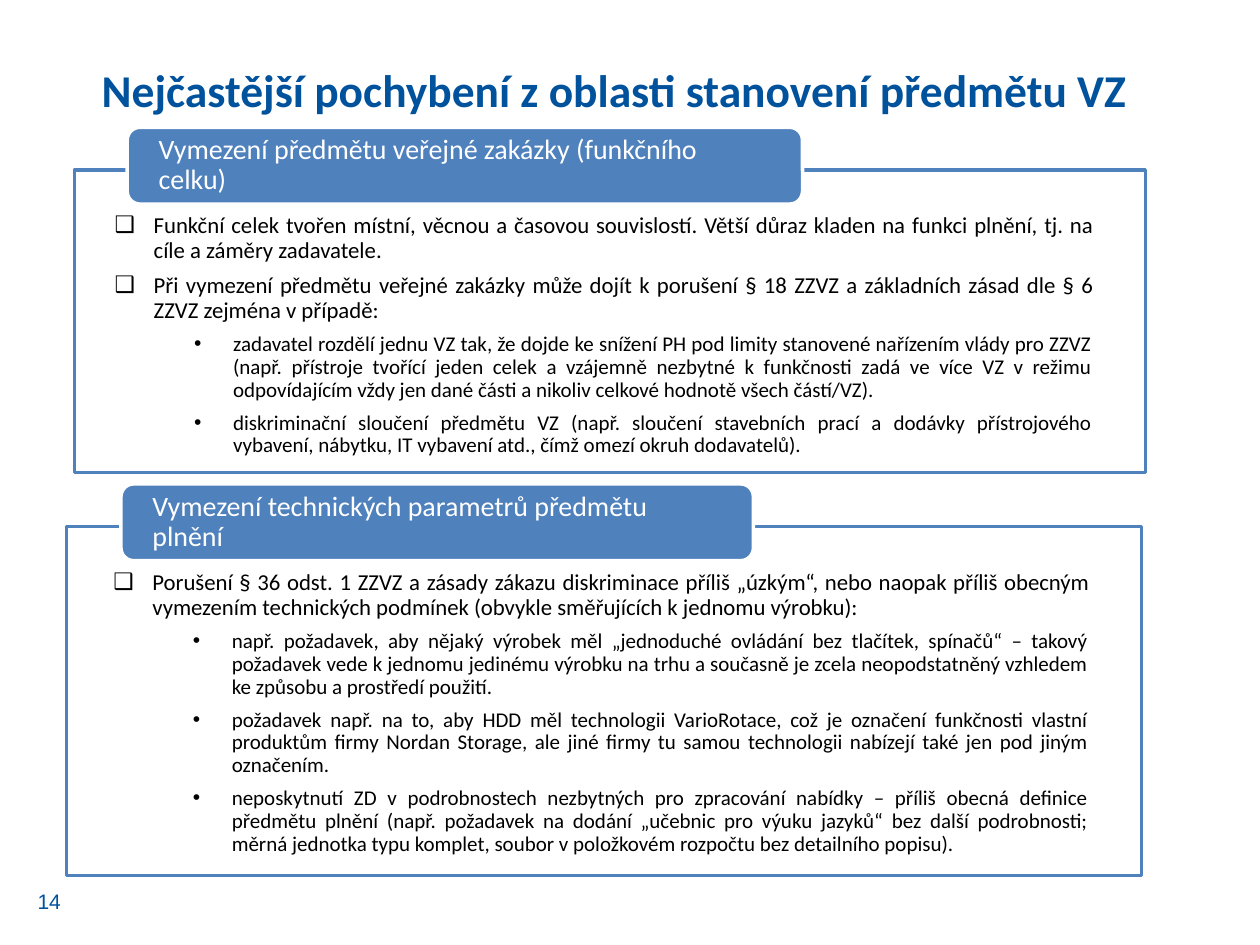
from dataclasses import dataclass

from lxml.etree import SubElement
from pptx import Presentation
from pptx.dml.color import RGBColor
from pptx.enum.shapes import MSO_SHAPE
from pptx.enum.text import MSO_ANCHOR, PP_ALIGN
from pptx.oxml.ns import qn
from pptx.util import Inches, Pt

SLIDE_W, SLIDE_H = Inches(10), Inches(7.5)


@dataclass(frozen=True)
class Theme:
    navy: str = "00529C"
    blue: str = "4F81BD"
    white: str = "FFFFFF"
    black: str = "000000"
    font: str = "Calibri"
    number_font: str = "Arial"
    title: int = 26
    header: int = 16
    point: int = 13
    detail: int = 12
    number: int = 12
    border: int = 2


THEME = Theme()

# Outline depth: bullet, level, indent in inches, type size
POINT = ("❑", 1, 0.31, THEME.point)
DETAIL = ("•", 3, 0.94, THEME.detail)
HANGING = 0.31

# Areas are left, top, width, height in percent of the slide
SECTIONS = [
    {
        "header": "Vymezení předmětu veřejné zakázky (funkčního celku)",
        "header_area": (10.1, 13.47, 53.6, 8.13),
        "frame_area": (5.9, 18, 85, 32),
        "body_area": (3.5, 16.93, 88.8, 32),
        "body": [
            (POINT, "Funkční celek tvořen místní, věcnou a časovou souvislostí. Větší důraz "
                    "kladen na funkci plnění, tj. na cíle a záměry zadavatele."),
            (POINT, "Při vymezení předmětu veřejné zakázky může dojít k porušení § 18 ZZVZ "
                    "a základních zásad dle § 6 ZZVZ zejména v případě:"),
            (DETAIL, "zadavatel rozdělí jednu VZ tak, že dojde ke snížení PH pod limity "
                     "stanovené nařízením vlády pro ZZVZ (např. přístroje tvořící jeden celek "
                     "a vzájemně nezbytné k funkčnosti zadá ve více VZ v režimu odpovídajícím "
                     "vždy jen dané části a nikoliv celkové hodnotě všech částí/VZ)."),
            (DETAIL, "diskriminační sloučení předmětu VZ (např. sloučení stavebních prací "
                     "a dodávky přístrojového vybavení, nábytku, IT vybavení atd., čímž omezí "
                     "okruh dodavatelů)."),
        ],
    },
    {
        "header": "Vymezení technických parametrů předmětu plnění",
        "header_area": (9.6, 51.2, 50.2, 8.13),
        "frame_area": (5.3, 55.73, 85.3, 36.93),
        "body_area": (3.4, 54.67, 88.6, 38),
        "body": [
            (POINT, "Porušení § 36 odst. 1 ZZVZ a zásady zákazu diskriminace příliš „úzkým“, "
                    "nebo naopak příliš obecným vymezením technických podmínek (obvykle "
                    "směřujících k jednomu výrobku):"),
            (DETAIL, "např. požadavek, aby nějaký výrobek měl „jednoduché ovládání bez "
                     "tlačítek, spínačů“ – takový požadavek vede k jednomu jedinému výrobku "
                     "na trhu a současně je zcela neopodstatněný vzhledem ke způsobu "
                     "a prostředí použití."),
            (DETAIL, "požadavek např. na to, aby HDD měl technologii VarioRotace, což je "
                     "označení funkčnosti vlastní produktům firmy Nordan Storage, ale jiné "
                     "firmy tu samou technologii nabízejí také jen pod jiným označením."),
            (DETAIL, "neposkytnutí ZD v podrobnostech nezbytných pro zpracování nabídky – "
                     "příliš obecná definice předmětu plnění (např. požadavek na dodání "
                     "„učebnic pro výuku jazyků“ bez další podrobnosti; měrná jednotka typu "
                     "komplet, soubor v položkovém rozpočtu bez detailního popisu)."),
        ],
    },
]


def place(area):
    left, top, width, height = area
    return (int(SLIDE_W * left / 100), int(SLIDE_H * top / 100),
            int(SLIDE_W * width / 100), int(SLIDE_H * height / 100))


def set_insets(frame, left, top, right, bottom):
    frame.margin_left, frame.margin_top = Inches(left), Inches(top)
    frame.margin_right, frame.margin_bottom = Inches(right), Inches(bottom)


def add_run(paragraph, text, size, color, font=THEME.font, bold=False):
    run = paragraph.add_run()
    run.text = text
    run.font.name, run.font.size, run.font.bold = font, Pt(size), bold
    run.font.color.rgb = RGBColor.from_string(color)


def add_text_frame(slide, area):
    frame = slide.shapes.add_textbox(*place(area)).text_frame
    frame.word_wrap = True
    return frame


def add_block(slide, preset, area, fill, line):
    block = slide.shapes.add_shape(preset, *place(area))
    block.shadow.inherit = False
    block.fill.solid()
    block.fill.fore_color.rgb = RGBColor.from_string(fill)
    block.line.color.rgb = RGBColor.from_string(line)
    block.line.width = Pt(THEME.border)
    return block


def add_frame(slide, area):
    border = add_block(slide, MSO_SHAPE.RECTANGLE, area, THEME.white, THEME.blue)
    # 90 % opaque fill
    fill_color = border.fill._xPr.find(qn("a:solidFill"))[0]
    SubElement(fill_color, qn("a:alpha"), val="90000")


def add_header(slide, area, text):
    header = add_block(slide, MSO_SHAPE.ROUNDED_RECTANGLE, area, THEME.blue, THEME.white)
    frame = header.text_frame
    frame.word_wrap = True
    frame.vertical_anchor = MSO_ANCHOR.MIDDLE
    set_insets(frame, 0.22, 0, 0.22, 0)
    paragraph = frame.paragraphs[0]
    paragraph.alignment = PP_ALIGN.LEFT
    paragraph.line_spacing = 0.9
    add_run(paragraph, text, THEME.header, THEME.white)


def set_bullet(paragraph, bullet, indent):
    properties = paragraph._p.get_or_add_pPr()
    properties.set("marL", str(Inches(indent)))
    properties.set("indent", str(-Inches(HANGING)))
    SubElement(properties, qn("a:buFont"), typeface=THEME.number_font)
    SubElement(properties, qn("a:buChar"), char=bullet)


def add_body(slide, area, items):
    frame = add_text_frame(slide, area)
    set_insets(frame, 0.56, 0.43, 0.56, 0.09)
    for index, ((bullet, level, indent, size), text) in enumerate(items):
        paragraph = frame.add_paragraph() if index else frame.paragraphs[0]
        set_bullet(paragraph, bullet, indent)
        paragraph.level = level
        paragraph.alignment = PP_ALIGN.JUSTIFY
        paragraph.line_spacing = 0.9
        paragraph.space_after = Pt(6)
        add_run(paragraph, text, size, THEME.black)


def add_title(slide, text):
    paragraph = add_text_frame(slide, (5.3, 5.87, 87, 7.6)).paragraphs[0]
    paragraph.alignment = PP_ALIGN.CENTER
    add_run(paragraph, text, THEME.title, THEME.navy, bold=True)


def add_page_number(slide, number):
    frame = add_text_frame(slide, (2, 92.67, 5.5, 5.33))
    frame.vertical_anchor = MSO_ANCHOR.MIDDLE
    add_run(frame.paragraphs[0], number, THEME.number, THEME.navy, THEME.number_font)


def main():
    deck = Presentation()
    deck.slide_width, deck.slide_height = SLIDE_W, SLIDE_H
    slide = deck.slides.add_slide(deck.slide_layouts[6])

    # Page number and title
    add_page_number(slide, "14")
    add_title(slide, "Nejčastější pochybení z oblasti stanovení předmětu VZ")

    # Framed sections, each with its header over the top border
    for section in SECTIONS:
        add_frame(slide, section["frame_area"])
        add_body(slide, section["body_area"], section["body"])
        add_header(slide, section["header_area"], section["header"])

    deck.save("out.pptx")


if __name__ == "__main__":
    main()
